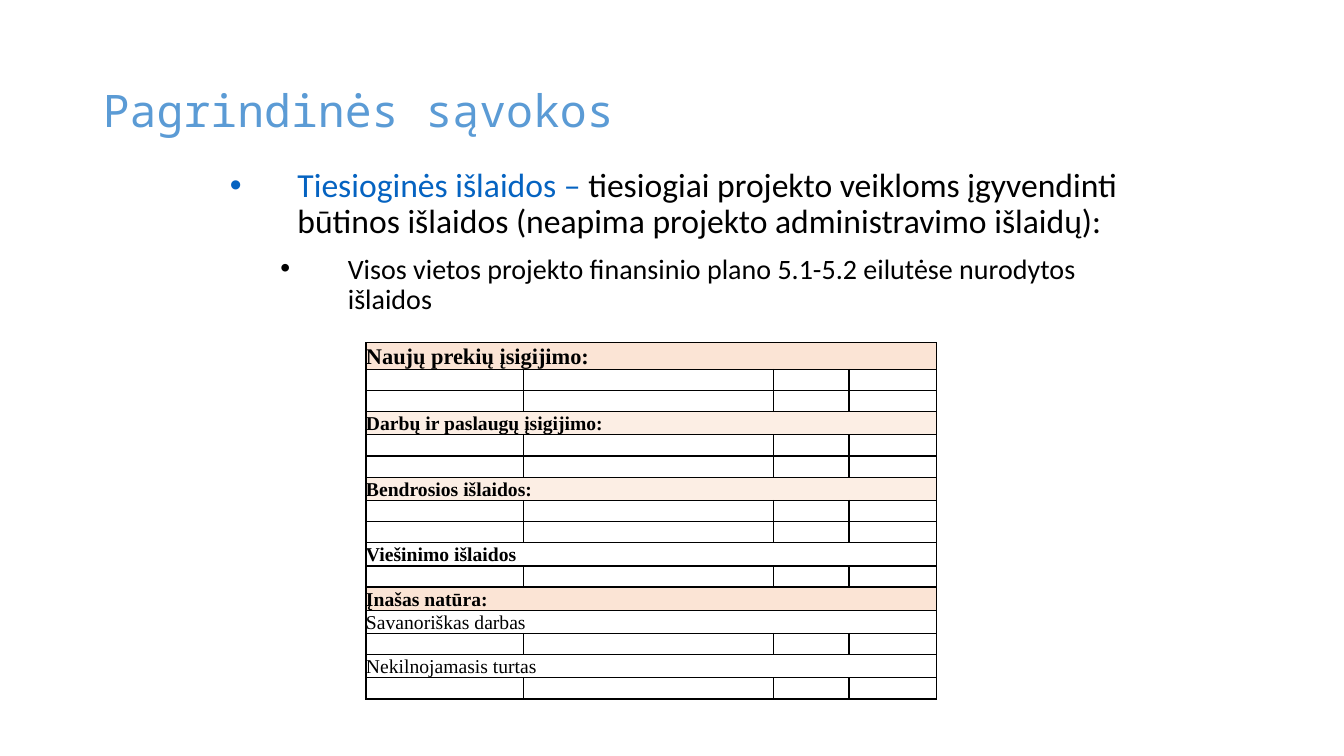
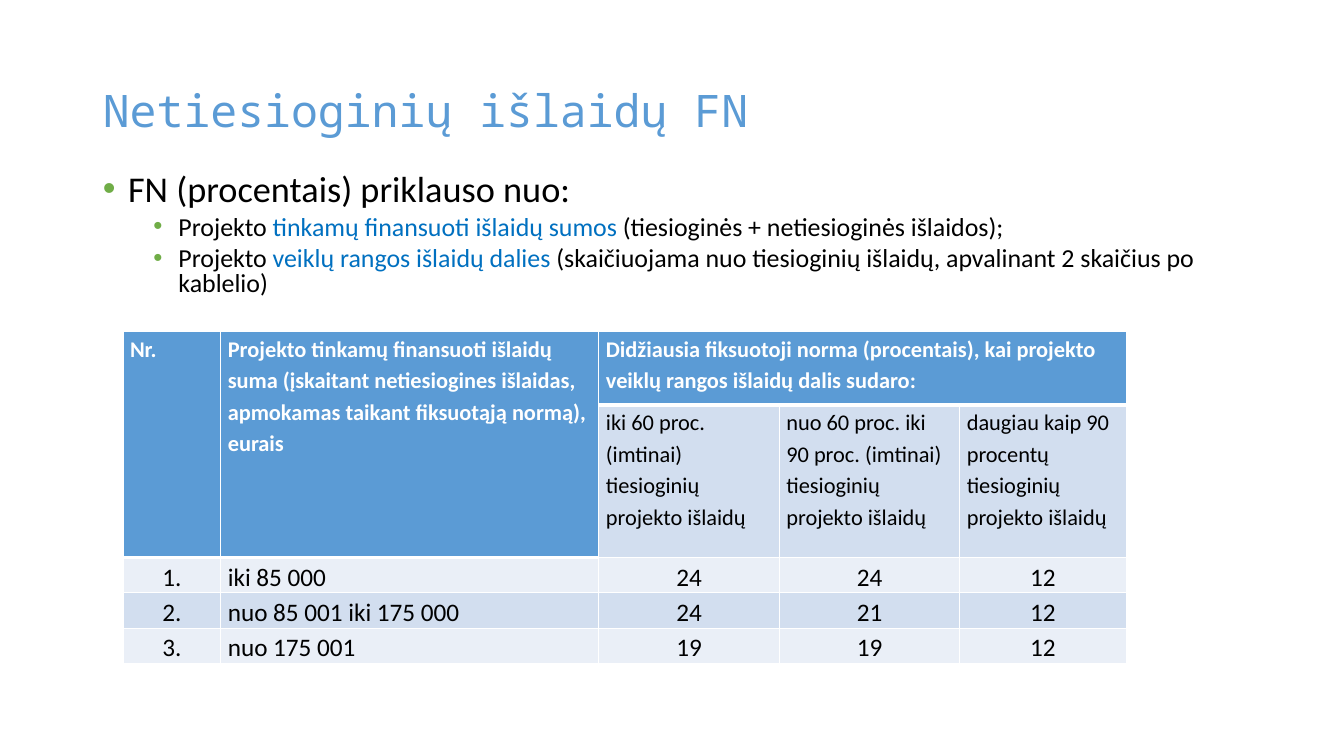
import pptx
import pptx.dml.color
import pptx.enum.text
import pptx.oxml
import pptx.oxml.ns
import pptx.util

Inches = pptx.util.Inches
Pt = pptx.util.Pt
RGBColor = pptx.dml.color.RGBColor
ALIGN = pptx.enum.text.PP_ALIGN
ANCHOR = pptx.enum.text.MSO_ANCHOR

ACCENT_BLUE = RGBColor(0x5B, 0x9B, 0xD5)
LINK_BLUE = RGBColor(0x05, 0x63, 0xC1)
TERM_BLUE = RGBColor(0x00, 0x70, 0xC0)
BULLET_GREEN = RGBColor(0x70, 0xAD, 0x47)
BLACK = RGBColor(0x00, 0x00, 0x00)
WHITE = RGBColor(0xFF, 0xFF, 0xFF)
PEACH = RGBColor(0xFB, 0xE4, 0xD5)
LIGHT_PEACH = RGBColor(0xFC, 0xEE, 0xE4)
BAND_DARK = RGBColor(0xD2, 0xDE, 0xEF)
BAND_LIGHT = RGBColor(0xEA, 0xEF, 0xF7)

TITLE_FONT = "Noto Sans Mono"
BODY_FONT = "Calibri"
FORM_FONT = "Times New Roman"

EXPENSE_COLUMNS = [1.56, 2.48, 0.75, 0.87]
EXPENSE_SECTIONS = [
    ("Naujų prekių įsigijimo:", PEACH, 16, True, 2),
    ("Darbų ir paslaugų įsigijimo:", LIGHT_PEACH, 14, True, 2),
    ("Bendrosios išlaidos:", LIGHT_PEACH, 14, True, 2),
    ("Viešinimo išlaidos", None, 14, True, 1),
    ("Įnašas natūra:", PEACH, 14, True, 0),
    ("Savanoriškas darbas", None, 14, False, 1),
    ("Nekilnojamasis turtas", None, 14, False, 1),
]

RATE_COLUMNS = [0.97, 3.75, 1.79, 1.79, 1.65]
RATE_ROWS = [0.73, 1.51, 0.34, 0.34, 0.34]
RATE_HEADERS = [
    "Nr.",
    "Projekto tinkamų finansuoti išlaidų suma (įskaitant netiesiogines išlaidas, "
    "apmokamas taikant fiksuotąją normą), eurais",
    "Didžiausia fiksuotoji norma (procentais), kai projekto veiklų rangos išlaidų dalis sudaro:",
]
RATE_SUBHEADERS = [
    "iki 60 proc. (imtinai) tiesioginių projekto išlaidų",
    "nuo 60 proc. iki 90 proc. (imtinai) tiesioginių projekto išlaidų",
    "daugiau kaip 90 procentų tiesioginių projekto išlaidų",
]
RATES = [
    ["1.", "iki 85 000", "24", "24", "12"],
    ["2.", "nuo 85 001 iki 175 000", "24", "21", "12"],
    ["3.", "nuo 175 001", "19", "19", "12"],
]


def add_element(parent, tag, **attributes):
    """Append a DrawingML child element and return it."""
    element = pptx.oxml.parse_xml(f"<{tag} {pptx.oxml.ns.nsdecls('a')}/>")
    for name, value in attributes.items():
        element.set(name, str(value))
    parent.append(element)
    return element


def format_run(run, size, font, color, bold=False):
    """Set the look of one run."""
    run.font.size = Pt(size)
    run.font.name = font
    run.font.bold = bold
    run.font.color.rgb = color


def place(shape, left, top, width, height):
    """Move and size a shape, in inches."""
    shape.left, shape.top = Inches(left), Inches(top)
    shape.width, shape.height = Inches(width), Inches(height)


def add_titled_slide(presentation, title):
    """Add a slide with the shared title style."""
    slide = presentation.slides.add_slide(presentation.slide_layouts[1])
    shape = slide.shapes.title
    place(shape, 0.92, 0.4, 11.5, 1.45)
    frame = shape.text_frame
    frame.text = title
    frame.auto_size = pptx.enum.text.MSO_AUTO_SIZE.NONE
    frame.vertical_anchor = ANCHOR.MIDDLE
    paragraph = frame.paragraphs[0]
    paragraph.alignment = ALIGN.LEFT
    paragraph.line_spacing = 0.9
    format_run(paragraph.runs[0], 32, TITLE_FONT, ACCENT_BLUE)
    return slide


def set_bullet(paragraph, margin, hanging, color):
    """Give a paragraph a round bullet with a hanging indent."""
    properties = paragraph._p.get_or_add_pPr()
    properties.set("marL", str(Inches(margin)))
    properties.set("indent", str(-Inches(hanging)))
    if color is not None:
        bullet_color = add_element(properties, "a:buClr")
        add_element(bullet_color, "a:srgbClr", val=color)
    add_element(properties, "a:buFont", typeface="Arial")
    add_element(properties, "a:buChar", char="•")


def fill_body(slide, box, items, sizes, hanging, line_spacing, space, bullet_color=None):
    """Write (level, runs) items as a bulleted list in the body placeholder."""
    body = slide.placeholders[1]
    place(body, *box)
    frame = body.text_frame
    frame.auto_size = pptx.enum.text.MSO_AUTO_SIZE.NONE
    for index, (level, runs) in enumerate(items):
        paragraph = frame.add_paragraph() if index else frame.paragraphs[0]
        paragraph.level = level
        paragraph.line_spacing = line_spacing
        paragraph.space_before = Pt(space if index else 0)
        set_bullet(paragraph, hanging + 0.5 * level, hanging, bullet_color)
        for text, color in runs:
            run = paragraph.add_run()
            run.text = text
            format_run(run, sizes[level], BODY_FONT, color)


def add_plain_table(slide, left, top, columns, rows):
    """Add a table without style banding, sized by its columns and rows."""
    frame = slide.shapes.add_table(
        len(rows), len(columns), Inches(left), Inches(top),
        Inches(sum(columns)), Inches(sum(rows)))
    table = frame.table
    table.first_row = table.horz_banding = False
    for column, width in zip(table.columns, columns):
        column.width = Inches(width)
    for row, height in zip(table.rows, rows):
        row.height = Inches(height)
    return table


def style_cell(cell, fill, border, inset=0, top=1, bottom=1):
    """Set the borders, fill and insets of a cell."""
    properties = cell._tc.get_or_add_tcPr()
    for side, width in (("L", 1), ("R", 1), ("T", top), ("B", bottom)):
        line = add_element(properties, f"a:ln{side}", w=Pt(width))
        add_element(add_element(line, "a:solidFill"), "a:srgbClr", val=border)
    if fill is None:
        cell.fill.background()
    else:
        cell.fill.solid()
        cell.fill.fore_color.rgb = fill
    cell.margin_left = cell.margin_right = Inches(inset)
    cell.margin_top = cell.margin_bottom = 0


def write_cell(cell, text, size, font, color, bold=False, alignment=ALIGN.LEFT, spacing=1.15):
    """Write one formatted paragraph in a cell."""
    cell.text_frame.text = text
    paragraph = cell.text_frame.paragraphs[0]
    paragraph.alignment = alignment
    paragraph.line_spacing = spacing
    format_run(paragraph.runs[0], size, font, color, bold)


def add_expense_table(slide):
    """Add the form with spanning section rows and empty entry rows."""
    row_count = sum(1 + section[-1] for section in EXPENSE_SECTIONS)
    table = add_plain_table(slide, 3.63, 3.4, EXPENSE_COLUMNS, [0.21] * row_count)
    for cell in table.iter_cells():
        add_element(cell.text_frame.paragraphs[0]._p, "a:endParaRPr", sz=1100)
    row = 0
    for text, fill, size, bold, entry_rows in EXPENSE_SECTIONS:
        for offset in range(entry_rows + 1):
            for cell in table.rows[row + offset].cells:
                style_cell(cell, None if offset else fill, BLACK)
        heading = table.cell(row, 0)
        heading.merge(table.cell(row, len(EXPENSE_COLUMNS) - 1))
        write_cell(heading, text, size, FORM_FONT, BLACK, bold, ALIGN.JUSTIFY, 1.07)
        row += entry_rows + 1


def add_rate_table(slide):
    """Add the table of maximum flat rates."""
    table = add_plain_table(slide, 1.22, 3.29, RATE_COLUMNS, RATE_ROWS)
    for row in range(len(RATE_ROWS)):
        for column in range(len(RATE_COLUMNS)):
            header_end = 1 if column < 2 else 0
            fill = BAND_LIGHT if row % 2 == 0 else BAND_DARK
            if row <= header_end:
                fill = ACCENT_BLUE
            style_cell(table.cell(row, column), fill, WHITE, 0.07,
                       top=3 if row == header_end + 1 else 1,
                       bottom=3 if row <= header_end else 1)
    for column, (text, end) in enumerate(zip(RATE_HEADERS, ((1, 0), (1, 1), (0, 4)))):
        cell = table.cell(0, column)
        cell.merge(table.cell(*end))
        write_cell(cell, text, 16, BODY_FONT, WHITE, True)
    for column, text in enumerate(RATE_SUBHEADERS, 2):
        write_cell(table.cell(1, column), text, 16, BODY_FONT, BLACK)
    for row, values in enumerate(RATES, 2):
        for column, text in enumerate(values):
            cell = table.cell(row, column)
            cell.vertical_anchor = ANCHOR.MIDDLE
            alignment = ALIGN.LEFT if column == 1 else ALIGN.CENTER
            write_cell(cell, text, 18, BODY_FONT, BLACK, alignment=alignment)


def build_concepts_slide(presentation):
    """Build the slide on direct costs."""
    slide = add_titled_slide(presentation, "Pagrindinės sąvokos")
    items = [
        (0, [("Tiesioginės išlaidos – ", LINK_BLUE),
             ("tiesiogiai projekto veikloms įgyvendinti būtinos išlaidos "
              "(neapima projekto administravimo išlaidų):", BLACK)]),
        (1, [("Visos vietos projekto finansinio plano 5.1-5.2 eilutėse nurodytos išlaidos", BLACK)]),
    ]
    fill_body(slide, (2.18, 1.62, 9.05, 1.63), items, (24, 20), 0.67, 0.9, 10)
    add_expense_table(slide)


def build_rates_slide(presentation):
    """Build the slide on the flat rate for indirect costs."""
    slide = add_titled_slide(presentation, "Netiesioginių išlaidų FN")
    items = [
        (0, [("FN (procentais) priklauso nuo:", BLACK)]),
        (1, [("Projekto ", BLACK),
             ("tinkamų finansuoti išlaidų sumos ", TERM_BLUE),
             ("(tiesioginės + netiesioginės išlaidos);", BLACK)]),
        (1, [("Projekto ", BLACK),
             ("veiklų rangos išlaidų dalies ", TERM_BLUE),
             ("(skaičiuojama nuo tiesioginių išlaidų, apvalinant 2 skaičius po kablelio)", BLACK)]),
    ]
    fill_body(slide, (0.92, 1.68, 11.5, 1.35), items, (25.9, 18.5), 0.25, 0.8, 5, BULLET_GREEN)
    add_rate_table(slide)


def main():
    """Build and save the presentation."""
    presentation = pptx.Presentation()
    presentation.slide_width = Inches(13.33)
    presentation.slide_height = Inches(7.5)
    build_concepts_slide(presentation)
    build_rates_slide(presentation)
    presentation.save("out.pptx")


if __name__ == "__main__":
    main()
